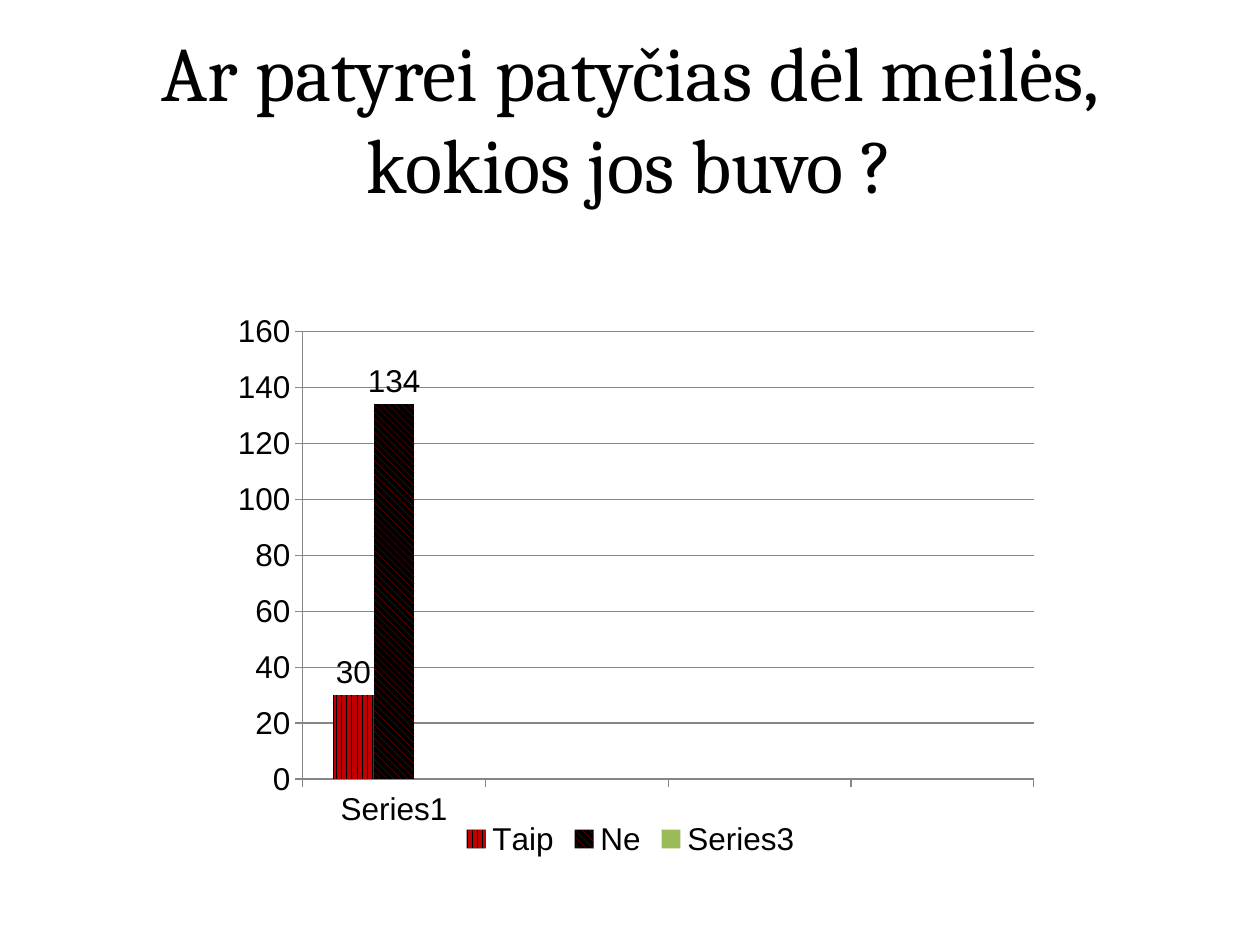
import pptx
import pptx.chart.data
import pptx.dml.color
import pptx.enum.chart
import pptx.enum.dml
import pptx.enum.text
import pptx.oxml
import pptx.oxml.ns
import pptx.util
from dataclasses import dataclass

Cm = pptx.util.Cm
Pt = pptx.util.Pt
Rgb = pptx.dml.color.RGBColor.from_string
Hatch = pptx.enum.dml.MSO_PATTERN
Kind = pptx.enum.chart


@dataclass(frozen=True)
class Theme:
    ink: str = "000000"
    red: str = "C00000"
    green: str = "9BBB59"
    grid: str = "868686"
    head: str = "Cambria"
    body: str = "Arial"
    large: int = 44
    small: int = 18


class Deck:
    def __init__(self, theme):
        self.theme = theme
        self.prs = pptx.Presentation()
        self.prs.slide_width, self.prs.slide_height = Cm(25.4), Cm(19.05)
        self.slide = self.prs.slides.add_slide(self.prs.slide_layouts[6])

    def title(self, text, *box):
        frame = self.slide.shapes.add_textbox(*map(Cm, box)).text_frame
        frame.word_wrap = True
        frame.vertical_anchor = pptx.enum.text.MSO_ANCHOR.MIDDLE
        frame.text = text
        para = frame.paragraphs[0]
        para.alignment = pptx.enum.text.PP_ALIGN.CENTER
        self.font(para.runs[0].font, self.theme.head, self.theme.large)

    def font(self, font, name, size):
        font.name, font.size = name, Pt(size)
        font.color.rgb = Rgb(self.theme.ink)

    def line(self, fmt):
        fmt.line.color.rgb = Rgb(self.theme.grid)
        fmt.line.width = Pt(0.75)

    def columns(self, cats, rows, *box):
        data = pptx.chart.data.CategoryChartData()
        data.categories = cats
        for name, vals, _, _ in rows:
            data.add_series(name, vals)
        chart = self.slide.shapes.add_chart(
            Kind.XL_CHART_TYPE.COLUMN_CLUSTERED, *map(Cm, box), data).chart
        chart.has_title = False
        self.font(chart.font, self.theme.body, self.theme.small)

        # Legend
        chart.has_legend = True
        chart.legend.position = Kind.XL_LEGEND_POSITION.BOTTOM
        chart.legend.include_in_layout = False

        # Axes
        for axis in (chart.category_axis, chart.value_axis):
            axis.major_tick_mark = Kind.XL_TICK_MARK.OUTSIDE
            axis.minor_tick_mark = Kind.XL_TICK_MARK.NONE
            self.line(axis.format)
        scale = chart.value_axis
        scale.minimum_scale, scale.maximum_scale, scale.major_unit = 0, 160, 20
        scale.has_major_gridlines = True
        self.line(scale.major_gridlines.format)

        # Columns and their values
        plot = chart.plots[0]
        plot.gap_width, plot.overlap = 150, 0
        plot.vary_by_categories = False
        for series, (_, _, color, hatch) in zip(plot.series, rows):
            self.paint(series.format.fill, color, hatch)
            labels = series.data_labels
            labels.show_value = True
            labels.position = Kind.XL_LABEL_POSITION.OUTSIDE_END
        return chart

    def paint(self, fill, color, hatch):
        if hatch is None:
            fill.solid()
            fill.fore_color.rgb = Rgb(color)
        else:
            fill.patterned()
            fill.pattern = hatch
            fill.fore_color.rgb = Rgb(color)
            fill.back_color.rgb = Rgb(self.theme.ink)

    def place(self, chart, x, y, w, h):
        qn = pptx.oxml.ns.qn
        area = chart.plots[0]._element.getparent()
        for old in area.findall(qn("c:layout")):
            area.remove(old)
        parts = [("layoutTarget", "inner"), ("xMode", "edge"), ("yMode", "edge"),
                 ("x", x), ("y", y), ("w", w), ("h", h)]
        inner = "".join(f'<c:{tag} val="{val}"/>' for tag, val in parts)
        area.insert(0, pptx.oxml.parse_xml(
            f'<c:layout {pptx.oxml.ns.nsdecls("c")}>'
            f"<c:manualLayout>{inner}</c:manualLayout></c:layout>"))


def main():
    theme = Theme()
    deck = Deck(theme)

    # Question
    deck.title("Ar patyrei patyčias dėl meilės, kokios jos buvo ?",
               1.27, 0.76, 22.86, 3.18)

    # Answers
    rows = [
        ("Taip", [30, None, None, None], theme.red, Hatch.DARK_VERTICAL),
        ("Ne", [134, None, None, None], theme.red, Hatch.WIDE_DOWNWARD_DIAGONAL),
        ("Series3", [None] * 4, theme.green, None),
    ]
    chart = deck.columns(["Series1", "", "", ""], rows, 4.24, 6.12, 16.94, 11.28)
    deck.place(chart, 0.11, 0.05, 0.87, 0.8)

    deck.prs.save("out.pptx")


if __name__ == "__main__":
    main()
